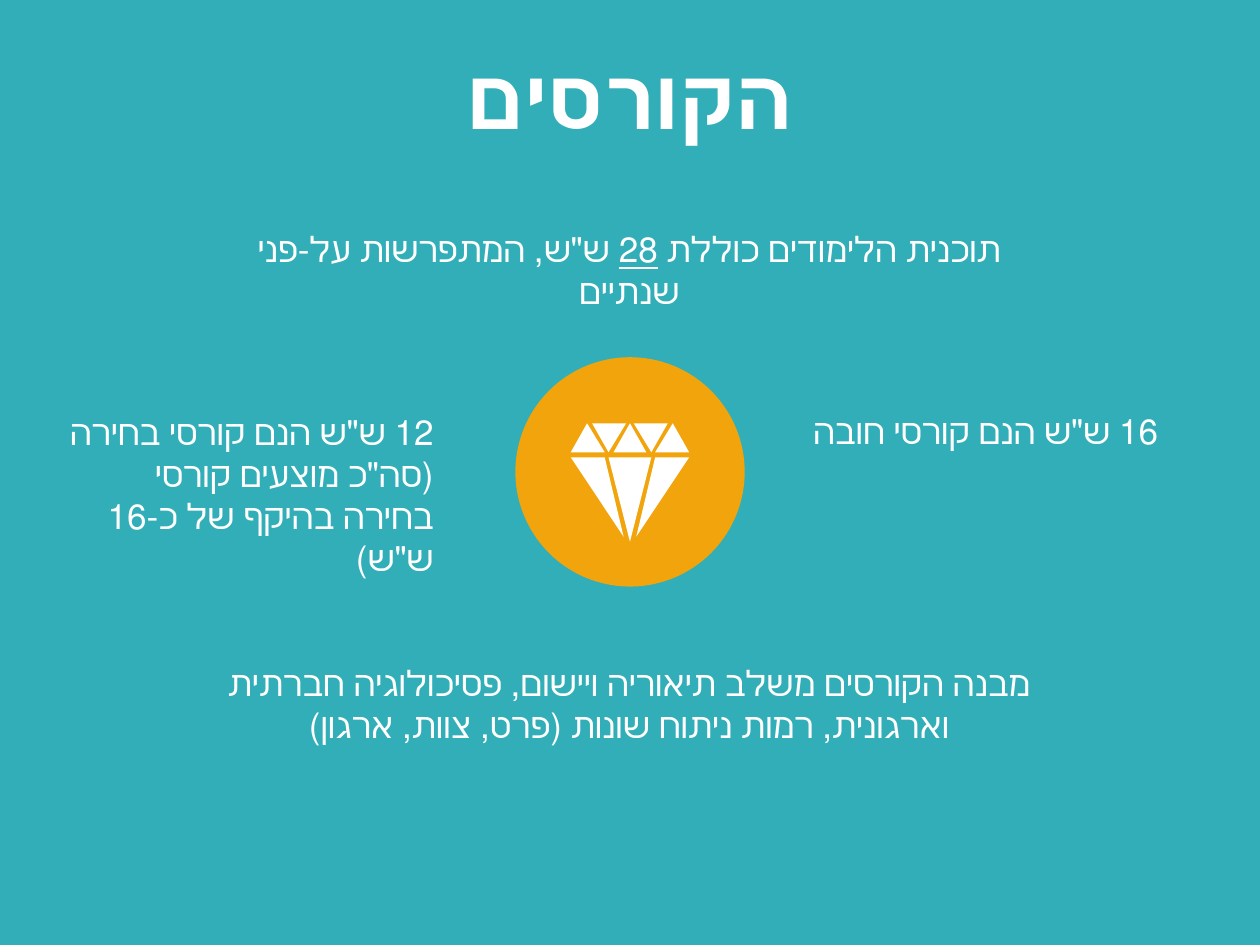
from dataclasses import dataclass

from pptx import Presentation
from pptx.dml.color import RGBColor
from pptx.enum.shapes import MSO_SHAPE
from pptx.enum.text import MSO_ANCHOR, PP_ALIGN
from pptx.util import Inches, Pt


@dataclass
class Theme:
    background: RGBColor = RGBColor(0x32, 0xAE, 0xB8)
    accent: RGBColor = RGBColor(0xF2, 0xA4, 0x0D)
    light: RGBColor = RGBColor(0xFF, 0xFF, 0xFF)
    font: str = "Arial"
    title_size: Pt = Pt(48)
    body_size: Pt = Pt(20)


theme = Theme()
presentation = Presentation()
presentation.slide_width = Inches(10)
presentation.slide_height = Inches(7.5)
column = presentation.slide_width / 100
row = presentation.slide_height / 75


def paint(shape, color):
    shape.shadow.inherit = False
    shape.fill.solid()
    shape.fill.fore_color.rgb = color
    shape.line.fill.background()


def add_text(slide, box, runs, size, alignment, bold=False):
    left, top, width, height = box
    shape = slide.shapes.add_textbox(
        round(left * column), round(top * row), round(width * column), round(height * row)
    )
    shape.text_frame.word_wrap = True
    paragraph = shape.text_frame.paragraphs[0]
    paragraph.alignment = alignment
    font = paragraph.font
    font.name = theme.font
    font.size = size
    font.bold = bold
    font.color.rgb = theme.light
    paragraph._p.get_or_add_pPr().set("rtl", "1")
    for text, underlined in runs:
        run = paragraph.add_run()
        run.text = text
        if underlined:
            run.font.underline = True
    return shape


slide = presentation.slides.add_slide(presentation.slide_layouts[6])
slide.background.fill.solid()
slide.background.fill.fore_color.rgb = theme.background

center = 50
badge_size = 18.2
badge = slide.shapes.add_shape(
    MSO_SHAPE.OVAL,
    round((center - badge_size / 2) * column),
    round(28.35 * row),
    round(badge_size * column),
    round(badge_size * row),
)
paint(badge, theme.accent)

crown, girdle, waist, tip = 33.6, 35.9, 36.3, 43
side_facets = [
    [(2, waist), (4.7, waist), (0.5, 42.6)],
    [(3.4, crown), (4.7, girdle), (2, girdle)],
    [(0.3, crown), (3, crown), (1.7, girdle)],
]
middle_facets = [
    [(-1.7, waist), (1.7, waist), (0, tip)],
    [(0, crown), (1.3, girdle), (-1.3, girdle)],
]
mirrored_facets = [[(-x, y) for x, y in facet] for facet in side_facets]
facets = [
    [((center + x) * column, y * row) for x, y in facet]
    for facet in side_facets + mirrored_facets + middle_facets
]
builder = slide.shapes.build_freeform(*facets[0][0])
builder.add_line_segments(facets[0][1:], close=True)
for facet in facets[1:]:
    builder.move_to(*facet[0])
    builder.add_line_segments(facet[1:], close=True)
paint(builder.convert_to_shape(), theme.light)

title = add_text(
    slide, (5, 3, 90, 9.3), [("הקורסים", False)], theme.title_size, PP_ALIGN.CENTER, bold=True
)
title.text_frame.vertical_anchor = MSO_ANCHOR.MIDDLE

body_texts = [
    (
        (16.1, 17.6, 67.7, 4.4),
        PP_ALIGN.CENTER,
        [("תוכנית הלימודים כוללת ", False), ("28", True), (' ש"ש, המתפרשות על-פני שנתיים', False)],
    ),
    ((61, 32, 31.9, 4.4), PP_ALIGN.RIGHT, [('16 ש"ש הנם קורסי חובה', False)]),
    (
        (3.5, 32.1, 31.9, 11.1),
        PP_ALIGN.RIGHT,
        [('12 ש"ש הנם קורסי בחירה (סה"כ מוצעים קורסי בחירה בהיקף של כ-16 ש"ש)', False)],
    ),
]
for box, alignment, runs in body_texts:
    add_text(slide, box, runs, theme.body_size, alignment)

structure_text = (
    "מבנה הקורסים משלב תיאוריה ויישום, פסיכולוגיה חברתית וארגונית, "
    "רמות ניתוח שונות (פרט, צוות, ארגון)"
)
structure = add_text(
    slide, (16.1, 52, 67.7, 7.7), [(structure_text, False)], theme.body_size, PP_ALIGN.CENTER
)
structure.text_frame.margin_left = structure.text_frame.margin_right = 0

presentation.save("out.pptx")
